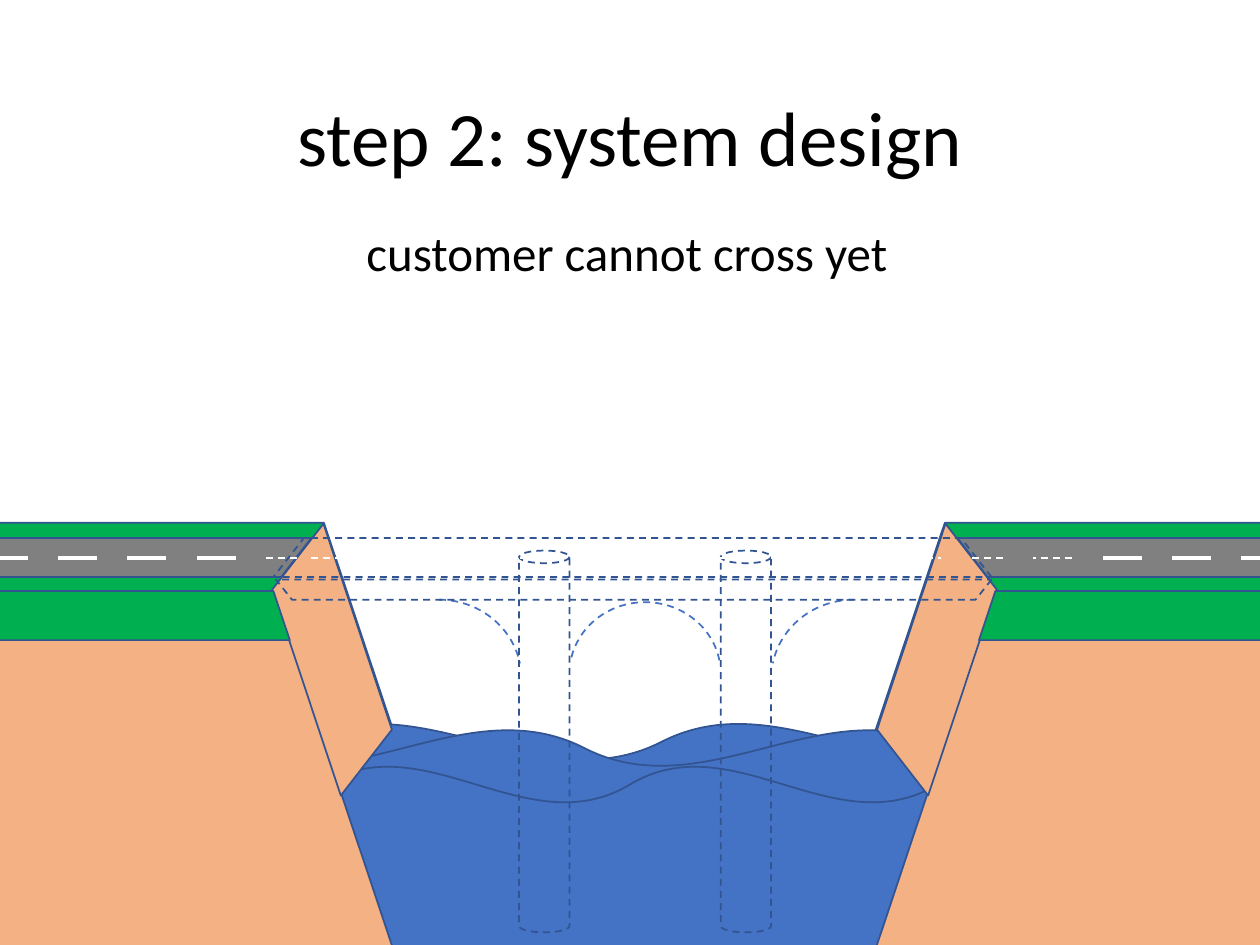
from dataclasses import dataclass, replace

from lxml import etree
from pptx import Presentation
from pptx import util as u
from pptx.dml.color import RGBColor
from pptx.enum import dml, shapes, text
from pptx.oxml import ns

COLORS = {"grass": "00B050", "soil": "F4B183", "road": "808080", "water": "4472C4",
          "edge": "325491", "paint": "FFFFFF", "ink": "000000"}
KIND = shapes.MSO_SHAPE

# Grid of 100 columns by 75 rows
deck = Presentation()
deck.slide_width, deck.slide_height = u.Inches(10), u.Inches(7.5)
COLUMN, ROW = deck.slide_width / 100, deck.slide_height / 75
MIRROR_SUM = 100.7  # a column and its mirrored column add up to this
ROAD_ROW = 44.3
page = deck.slides.add_slide(deck.slide_layouts[6])


@dataclass(frozen=True)
class Part:
    kind: KIND
    left: float
    top: float
    width: float
    height: float
    fill: str = ""
    adjust: tuple = ()
    flip: str = ""
    turn: float = 0
    edge: str = "edge"

    def mirrored(self) -> "Part":
        return replace(self, left=MIRROR_SUM - self.left - self.width,
                       flip="" if self.flip else "h", turn=-self.turn % 360)


@dataclass(frozen=True)
class Label:
    words: str
    left: float
    top: float
    width: float
    height: float
    size: int
    frame: dict
    para: dict


def color(name: str) -> RGBColor:
    return RGBColor.from_string(COLORS[name])


def style_line(line, name: str, points: float, dashed: bool) -> None:
    line.color.rgb = color(name)
    line.width = u.Pt(points)
    if dashed:
        line.dash_style = dml.MSO_LINE.DASH


def draw_part(part: Part) -> None:
    """Filled parts are built; unfilled ones are planned and get dashes."""
    shape = page.shapes.add_shape(
        part.kind, round(part.left * COLUMN), round(part.top * ROW),
        round(part.width * COLUMN), round(part.height * ROW))
    shape.shadow.inherit = False
    for index, value in enumerate(part.adjust):
        shape.adjustments[index] = value
    shape.rotation = part.turn
    for axis in part.flip:
        shape.element.spPr.xfrm.set(f"flip{axis.upper()}", "1")
    if part.fill:
        shape.fill.solid()
        shape.fill.fore_color.rgb = color(part.fill)
    else:
        shape.fill.background()
    style_line(shape.line, part.edge, 1, not part.fill)


def draw_mark(start: float, end: float, points: float = 2, dashed: bool = False) -> None:
    y = round(ROAD_ROW * ROW)
    mark = page.shapes.add_connector(
        shapes.MSO_CONNECTOR.STRAIGHT, round(start * COLUMN), y, round(end * COLUMN), y)
    etree.SubElement(mark.element.spPr, ns.qn("a:effectLst"))
    style_line(mark.line, "paint", points, dashed)


def draw_label(label: Label) -> None:
    box = page.shapes.add_textbox(
        round(label.left * COLUMN), round(label.top * ROW),
        round(label.width * COLUMN), round(label.height * ROW))
    for name, value in label.frame.items():
        setattr(box.text_frame, name, value)
    para = box.text_frame.paragraphs[0]
    for name, value in label.para.items():
        setattr(para, name, value)
    span = para.add_run()
    span.text = label.words
    for name, value in {"name": "Calibri", "size": u.Pt(label.size)}.items():
        setattr(span.font, name, value)
    span.font.color.rgb = color("ink")


# Left bank; the right one mirrors it
SLOPE, WAVE = (0.334,), (0.078, -0.009)
far_grass = Part(KIND.TRAPEZOID, -9.9, 41.5, 45.1, 28.4, "grass", SLOPE)
near_grass = replace(far_grass, left=-12.4, top=43.7)
road = Part(KIND.PARALLELOGRAM, -7.8, 42.7, 32.5, 3.1, "road", (0.77,))
soil = replace(far_grass, left=-13.9, top=46.9, fill="soil")
cliff = Part(KIND.PARALLELOGRAM, 15.9, 49.6, 20.9, 5.5, "soil", (0.668,), "h", 251.6)
verge = Part(KIND.TRAPEZOID, -13.8, 46.9, 36.8, 3.9, "grass", SLOPE)
marks = [(-0.9 + 5.5 * i, 2.2 + 5.5 * i) for i in range(4)]

# Right bank behind the water
for part in (far_grass, near_grass, road):
    draw_part(part.mirrored())
for start, end in marks[:3]:
    draw_mark(MIRROR_SUM - start, MIRROR_SUM - end)

# Left bank and water
back_wave = Part(KIND.DOUBLE_WAVE, 22.8, 57.4, 58.4, 18.8, "water", WAVE)
for part in (far_grass, back_wave, near_grass,
             replace(back_wave, left=17.7, top=57.9, flip="h"),
             replace(back_wave, left=24.7, top=60.8, width=49.7),
             soil, cliff, verge, road):
    draw_part(part)
for start, end in marks:
    draw_mark(start, end)

# Right bank in front of the water
for part in (soil, cliff, verge):
    draw_part(part.mirrored())

# Planned bridge: arches, pillars, deck and its front edge
arch = Part(KIND.ARC, 28.3, 47.6, 13.1, 12.6, adjust=(162, 209.394), edge="water")
pillar = Part(KIND.CAN, 41.2, 43.7, 4, 30.3)
for part in (arch,
             replace(arch, left=61.2, flip="h"),
             Part(KIND.ARC, 45.2, 47.8, 12, 11.3, adjust=(113.93, 209.394),
                  flip="h", edge="water"),
             pillar, replace(pillar, left=57.2),
             Part(KIND.TRAPEZOID, 21.7, 42.7, 57, 3.1, adjust=(0.783,), flip="h"),
             Part(KIND.TRAPEZOID, 21.9, 46, 56.8, 1.6, adjust=(0.794,), flip="hv")):
    draw_part(part)
planned_marks = [(24.7 + 5.21 * i, 27.8 + 5.21 * i) for i in range(10)]
for start, end in [(85.1, 82), (79.6, 77.1), (21.1, 23.6), *planned_marks]:
    draw_mark(start, end, 1, True)

# Wording
for label in (
    Label("step 2: system design", 6.9, 4, 86.2, 14.5, 44,
          {"word_wrap": True, "vertical_anchor": text.MSO_ANCHOR.MIDDLE},
          {"alignment": text.PP_ALIGN.CENTER, "line_spacing": 0.9}),
    Label("customer cannot cross yet", 28.1, 17.2, 43.8, 5.7, 28,
          {"word_wrap": False, "auto_size": text.MSO_AUTO_SIZE.SHAPE_TO_FIT_TEXT}, {}),
):
    draw_label(label)

deck.save("out.pptx")
